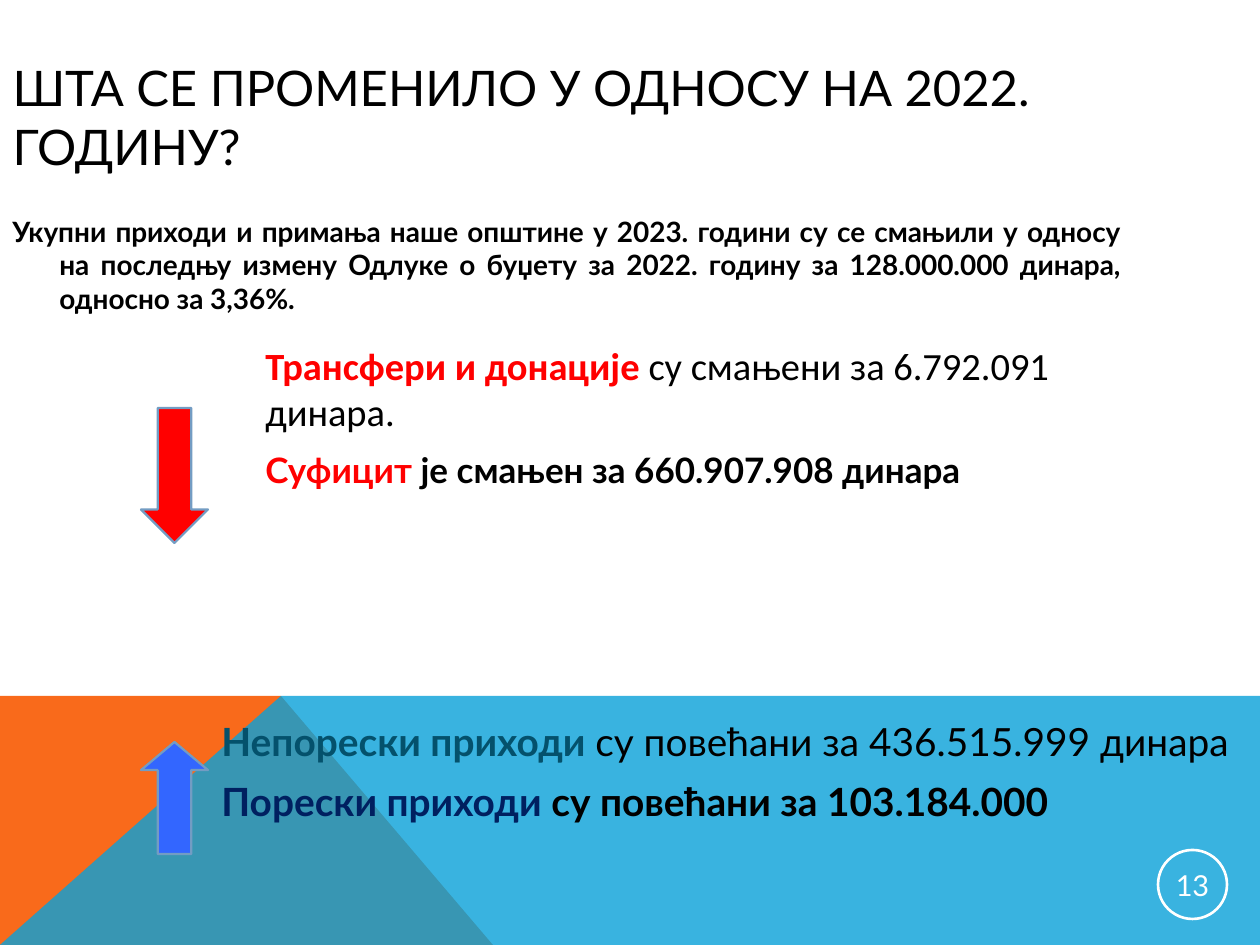
from dataclasses import dataclass

from lxml import etree
from pptx import Presentation
from pptx.dml.color import RGBColor
from pptx.enum.shapes import MSO_SHAPE
from pptx.enum.text import MSO_ANCHOR, PP_ALIGN
from pptx.oxml.ns import qn
from pptx.util import Emu, Pt

OVAL, DOWN, UP = MSO_SHAPE.OVAL, MSO_SHAPE.DOWN_ARROW, MSO_SHAPE.UP_ARROW
TOP, MIDDLE = MSO_ANCHOR.TOP, MSO_ANCHOR.MIDDLE
LEFT, CENTER, JUSTIFY = PP_ALIGN.LEFT, PP_ALIGN.CENTER, PP_ALIGN.JUSTIFY


@dataclass(frozen=True)
class Theme:
    font: str = "Lato"
    accent_font: str = "Calibri"
    black: str = "000000"
    white: str = "FFFFFF"
    orange: str = "F96A1B"
    sky: str = "08A1D9"
    red: str = "FF0000"
    blue: str = "3366FF"
    teal: str = "04516C"
    navy: str = "002060"
    arrow_line: str = "739CC3"
    title_size: float = 28
    lead_size: float = 16
    increase_size: float = 22.2
    transfer_size: float = 22
    surplus_size: float = 20
    number_size: float = 16.5
    paragraph_gap: float = 8


THEME = Theme()
WIDTH, HEIGHT = 1260, 945
EMU_PER_PX = 914400 / 126

# Content: a paragraph is (font, size, runs); a run is (text, colour, bold)
TITLE = [(THEME.font, THEME.title_size,
          [("ШТА СЕ ПРОМЕНИЛО У ОДНОСУ НА 2022. ГОДИНУ?", THEME.black, False)])]
LEAD = [(THEME.font, THEME.lead_size, [(
    "Укупни приходи и примања наше општине у 2023. години су се смањили у односу "
    "на последњу измену Одлуке о буџету за 2022. годину за 128.000.000 динара, "
    "односно за 3,36%.", THEME.black, True)])]
DECREASES = [
    (THEME.accent_font, THEME.transfer_size,
     [("Трансфери и донације ", THEME.red, True),
      ("су смањени за 6.792.091 динара.", THEME.black, False)]),
    (THEME.font, THEME.surplus_size,
     [("Суфицит", THEME.red, True),
      (" је смањен за 660.907.908 динара", THEME.black, True)]),
]
INCREASES = [
    (THEME.font, THEME.increase_size,
     [("Непорески приходи ", THEME.teal, True),
      ("су повећани за 436.515.999 динара", THEME.black, False)]),
    (THEME.font, THEME.increase_size,
     [("Порески приходи ", THEME.navy, True),
      ("су повећани за 103.184.000", THEME.black, True)]),
]
PAGE_NUMBER = [(THEME.font, THEME.number_size, [("13", THEME.white, False)])]

# Footer bands: outline, colour, opacity in percent
BAND_TOP, PEAK, FOOT = 696, 281, 493
BANDS = [
    ([(0, HEIGHT), (0, BAND_TOP), (PEAK, BAND_TOP), (FOOT, HEIGHT)], THEME.orange, 100),
    ([(0, HEIGHT), (PEAK, BAND_TOP), (WIDTH, BAND_TOP), (WIDTH, HEIGHT)], THEME.sky, 80),
]
# Text boxes: paragraphs, box, alignment, hanging indent
TEXT_BOXES = [
    (LEAD, (0, 208, 1134, 156), JUSTIFY, 47),
    (INCREASES, (209, 711, 1051, 144), LEFT, 0),
    (DECREASES, (253, 336, 843, 149), LEFT, 0),
]
# Arrows: preset, box, colour, head length
ARROWS = [
    (DOWN, (141, 408, 67, 135), THEME.red, 0.5),
    (UP, (141, 742, 67, 112), THEME.blue, 0.42),
]
NUMBER_BOX = (1158, 850, 69, 69)


def px(value):
    return Emu(round(value * EMU_PER_PX))


def place(box):
    return [px(value) for value in box]


def rgb(colour):
    return RGBColor.from_string(colour)


def write_text(shape, paragraphs, align=LEFT, anchor=TOP, hanging=0):
    frame = shape.text_frame
    frame.word_wrap = True
    frame.vertical_anchor = anchor
    for index, (font, size, runs) in enumerate(paragraphs):
        paragraph = frame.add_paragraph() if index else frame.paragraphs[0]
        paragraph.alignment = align
        paragraph.font.name = font
        paragraph.font.size = Pt(size)
        paragraph.space_before = Pt(THEME.paragraph_gap if index else 0)
        if hanging:
            properties = paragraph._p.get_or_add_pPr()
            properties.set("marL", str(px(hanging)))
            properties.set("indent", str(-px(hanging)))
        for text, colour, bold in runs:
            run = paragraph.add_run()
            run.text = text
            run.font.color.rgb = rgb(colour)
            run.font.bold = bold


def add_band(slide, points, colour, opacity):
    builder = slide.shapes.build_freeform(*points[0], scale=EMU_PER_PX)
    builder.add_line_segments(points[1:], close=True)
    band = builder.convert_to_shape()
    band.shadow.inherit = False
    band.fill.solid()
    band.fill.fore_color.rgb = rgb(colour)
    band.line.fill.background()
    if opacity < 100:
        colour_element = band.fill._xPr.find(qn("a:solidFill"))[0]
        alpha = etree.SubElement(colour_element, qn("a:alpha"))
        alpha.set("val", str(opacity * 1000))


def add_outlined(slide, preset, box, line_colour, line_width, fill=None):
    shape = slide.shapes.add_shape(preset, *place(box))
    shape.shadow.inherit = False
    if fill:
        shape.fill.solid()
        shape.fill.fore_color.rgb = rgb(fill)
    else:
        shape.fill.background()
    shape.line.color.rgb = rgb(line_colour)
    shape.line.width = Pt(line_width)
    return shape


def main():
    presentation = Presentation()
    presentation.slide_width, presentation.slide_height = px(WIDTH), px(HEIGHT)
    slide = presentation.slides.add_slide(presentation.slide_layouts[5])

    # Footer bands and page number
    for band in BANDS:
        add_band(slide, *band)
    badge = add_outlined(slide, OVAL, NUMBER_BOX, THEME.white, 1.5)
    frame = badge.text_frame
    frame.margin_left = frame.margin_right = px(1)
    frame.margin_top = frame.margin_bottom = px(1)
    write_text(badge, PAGE_NUMBER, CENTER, MIDDLE)

    # Title
    title = slide.shapes.title
    title.left, title.top, title.width, title.height = place((0, 38, 1100, 157))
    write_text(title, TITLE, anchor=MIDDLE)

    # Body text
    for paragraphs, box, align, hanging in TEXT_BOXES:
        text_box = slide.shapes.add_textbox(*place(box))
        write_text(text_box, paragraphs, align, hanging=hanging)

    # Direction arrows
    for preset, box, colour, head in ARROWS:
        arrow = add_outlined(slide, preset, box, THEME.arrow_line, 1.25, colour)
        arrow.adjustments[0] = 0.5
        arrow.adjustments[1] = head

    presentation.save("out.pptx")


if __name__ == "__main__":
    main()
